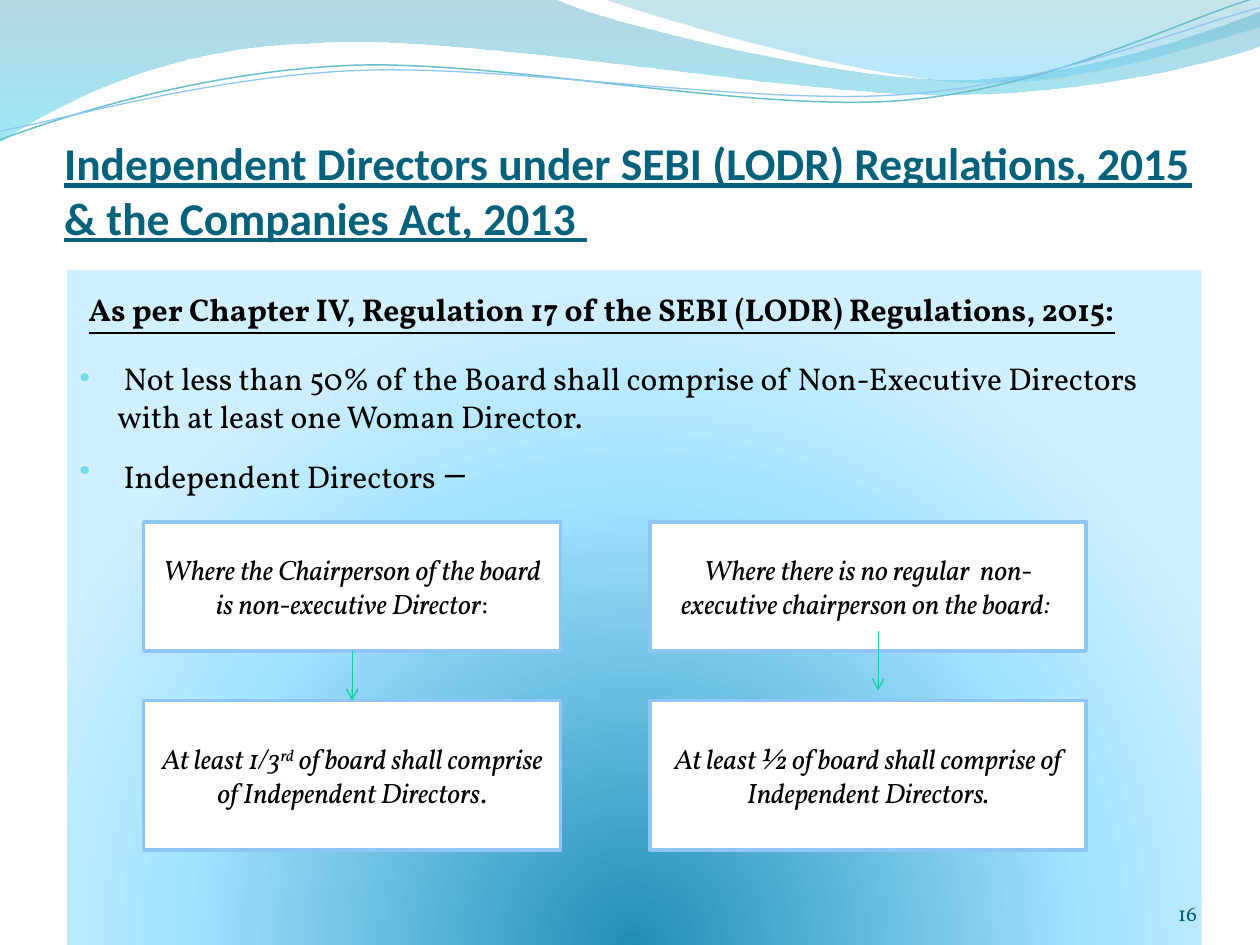
from lxml import etree
from pptx import Presentation
from pptx import util as u
from pptx.dml.color import RGBColor
from pptx.enum import shapes, text
from pptx.oxml import ns

WHITE = RGBColor(0xFF, 0xFF, 0xFF)
BLACK = RGBColor(0, 0, 0)
TITLE = RGBColor(0x04, 0x61, 0x7B)
NUMBER = RGBColor(0x04, 0x5D, 0x75)
BORDER = RGBColor(0x90, 0xC6, 0xF6)
WAVE = RGBColor(0x68, 0xBF, 0xCD)
ARROW = RGBColor(0x10, 0xCF, 0x9B)
BULLET = RGBColor(0x76, 0xD9, 0xE8)
UPPER_BAND = [(0, RGBColor(0x5F, 0xA8, 0xC4), 45), (100, RGBColor(0x4F, 0xDA, 0xEF), 55)]
RIGHT_BAND = [(0, RGBColor(0x4B, 0xAA, 0xB8), 30), (80, RGBColor(0x67, 0xCD, 0xF4), 45)]
PANEL = [(0, RGBColor(0x21, 0x8E, 0xB8), 100), (68, RGBColor(0xA2, 0xE3, 0xFF), 100),
         (100, RGBColor(0xD0, 0xEF, 0xFF), 100)]
COLUMNS, ROWS = 100, 75


def element(parent, tag, **attributes):
    child = etree.SubElement(parent, ns.qn(tag))
    for name, value in attributes.items():
        child.set(name, str(value))
    return child


def add_run(paragraph, content, font="Vollkorn", size=16, color=BLACK, bold=False,
            italic=False, underline=False, raised=False):
    run = paragraph.add_run()
    run.text = content
    run.font.name, run.font.size = font, u.Pt(size)
    run.font.bold, run.font.italic, run.font.underline = bold, italic, underline
    run.font.color.rgb = color
    if raised:
        run.font._element.set("baseline", "30000")


class SlideBuilder:
    def __init__(self, presentation):
        self.slide = presentation.slides.add_slide(presentation.slide_layouts[6])
        self.column = presentation.slide_width / COLUMNS
        self.row = presentation.slide_height / ROWS

    def place(self, *lengths):
        return [round(length * (self.row if index % 2 else self.column))
                for index, length in enumerate(lengths)]

    def gradient(self, shape, stops, circle=False):
        fill = etree.Element(ns.qn("a:gradFill"), rotWithShape="1")
        stop_list = element(fill, "a:gsLst")
        for position, color, opacity in stops:
            stop = element(stop_list, "a:gs", pos=position * 1000)
            tint = element(stop, "a:srgbClr", val=color)
            element(tint, "a:alpha", val=opacity * 1000)
        if circle:
            focus = element(fill, "a:path", path="circle")
            element(focus, "a:fillToRect", l=50000, t=130000, r=50000, b=-30000)
        else:
            element(fill, "a:lin", ang=5400000, scaled=0)
        properties = shape._element.spPr
        properties.find(ns.qn("a:prstGeom" if circle else "a:custGeom")).addnext(fill)
        shape.line.fill.background()

    def wave(self, start, segments, stops=None, color=None, width=0):
        anchors = [self.place(*segment[-2:]) for segment in segments]
        builder = self.slide.shapes.build_freeform(*self.place(*start), scale=1.0)
        builder.add_line_segments(anchors, close=stops is not None)
        shape = builder.convert_to_shape()
        shape.shadow.inherit = False
        for step, segment in zip(list(shape._element.iter(ns.qn("a:lnTo"))), segments):
            if len(segment) == 6:
                step.tag = ns.qn("a:cubicBezTo")
                controls = self.place(*segment[:4])
                for index, (x, y) in enumerate((controls[:2], controls[2:])):
                    point = element(step, "a:pt", x=x - shape.left, y=y - shape.top)
                    step.insert(index, point)
        if stops:
            self.gradient(shape, stops)
        else:
            shape.fill.background()
            shape.line.color.rgb, shape.line.width = color, u.Pt(width)

    def label(self, area, content, align=text.PP_ALIGN.LEFT, inset_top=0, **style):
        frame = self.slide.shapes.add_textbox(*self.place(*area)).text_frame
        frame.word_wrap = True
        frame.vertical_anchor = text.MSO_ANCHOR.BOTTOM
        frame.margin_left = frame.margin_right = frame.margin_bottom = 0
        frame.margin_top = u.Inches(inset_top)
        frame.paragraphs[0].alignment = align
        add_run(frame.paragraphs[0], content, **style)

    def rectangle(self, area):
        shape = self.slide.shapes.add_shape(shapes.MSO_SHAPE.RECTANGLE, *self.place(*area))
        shape.shadow.inherit = False
        shape.text_frame.word_wrap = True
        return shape

    def panel(self, area, paragraphs):
        shape = self.rectangle(area)
        self.gradient(shape, PANEL, circle=True)
        frame = shape.text_frame
        frame.vertical_anchor = text.MSO_ANCHOR.TOP
        for index, (bulleted, before, runs) in enumerate(paragraphs):
            paragraph = frame.add_paragraph() if index else frame.paragraphs[0]
            paragraph.alignment = text.PP_ALIGN.LEFT
            paragraph.space_before = u.Pt(before)
            properties = paragraph._p.get_or_add_pPr()
            properties.set("marL", str(u.Inches(0.3)))
            properties.set("indent", str(-u.Inches(0.3)))
            if bulleted:
                element(element(properties, "a:buClr"), "a:srgbClr", val=BULLET)
                element(properties, "a:buSzPct", val=95000)
                element(properties, "a:buFont", typeface="Arial")
                element(properties, "a:buChar", char="•")
            else:
                element(properties, "a:buNone")
            for content, style in runs:
                add_run(paragraph, content, **style)

    def box(self, area, runs):
        shape = self.rectangle(area)
        shape.fill.solid()
        shape.fill.fore_color.rgb = WHITE
        shape.line.color.rgb, shape.line.width = BORDER, u.Pt(2)
        shape.text_frame.vertical_anchor = text.MSO_ANCHOR.MIDDLE
        paragraph = shape.text_frame.paragraphs[0]
        paragraph.alignment = text.PP_ALIGN.CENTER
        for content, style in runs:
            add_run(paragraph, content, **{"italic": True, **style})

    def arrow(self, column, top, bottom):
        connector = self.slide.shapes.add_connector(
            shapes.MSO_CONNECTOR.STRAIGHT, *self.place(column, top, column, bottom))
        connector.line.color.rgb, connector.line.width = ARROW, u.Pt(0.75)
        element(connector.line._get_or_add_ln(), "a:tailEnd", type="arrow")
        element(connector._element.spPr, "a:effectLst")


def main():
    presentation = Presentation()
    presentation.slide_width, presentation.slide_height = u.Inches(10), u.Inches(7.5)
    builder = SlideBuilder(presentation)

    builder.wave((0, 0), [(44, -0.1), (47.6, 1.7, 66.4, 6.3, 75.8, 6.3),
                          (85.3, 6.3, 95.8, 2.6, 100, 0.9), (100.1, 3.6),
                          (98.3, 4.4, 87, 7.6, 74.6, 7.5), (62.2, 7.5, 38.2, 2.8, 25.7, 3.4),
                          (12.9, 3.6, 4.6, 8.3, -0.1, 11.3)], stops=UPPER_BAND)
    builder.wave((47.9, -0.1), [(50.9, 1.1, 68.2, 6.2, 76.9, 6.5),
                                (85.6, 6.9, 96.1, 3.2, 100, 2.1), (100, 0)], stops=RIGHT_BAND)
    builder.wave((0, 11.1), [(4.8, 9.3, 15.8, 5.7, 27.7, 5.2), (39.5, 4.7, 59.3, 8.9, 71.3, 8),
                             (83.3, 7.1, 93.8, 1.5, 99.8, -0.2)], color=WAVE, width=0.85)
    builder.wave((0, 10.4), [(4.7, 9.6, 16.4, 6.1, 28.3, 5.6), (40.3, 5.1, 59.7, 8.4, 71.7, 7.5),
                             (83.6, 6.7, 94.1, 2.1, 100, 0.6)], color=BORDER, width=0.75)

    builder.label((5.1, 9.2, 90, 10.2),
                  "Independent Directors under SEBI (LODR) Regulations, 2015 "
                  "& the Companies Act, 2013 ", inset_top=0.05,
                  font="Calibri", size=26, color=TITLE, bold=True, underline=True)

    body = {"size": 18}
    builder.panel((5.33, 21.43, 90, 53.57), [
        (False, 5, [(" ", {"size": 26, "color": WHITE}),
                    ("As per Chapter IV, Regulation 17 of the SEBI (LODR) Regulations, 2015:",
                     {**body, "bold": True, "underline": True})]),
        (True, 16, [(" Not less than 50% of the Board shall comprise of Non-Executive "
                     "Directors with at least one Woman Director.", body)]),
        (True, 5, [(" Independent Directors ", body), ("–", {"size": 26})]),
    ])

    cases = [
        (11.4, 33.1,
         [("Where the Chairperson of the board is non-executive Director", {}),
          (":", {"italic": False})],
         [("At least 1/3", {}), ("rd", {"raised": True}),
          (" of board shall comprise of Independent Directors", {}), (".", {"italic": False})]),
        (51.6, 34.6,
         [("Where there is no regular  non-executive chairperson on the board: ", {})],
         [("At least ½ of board shall comprise of Independent Directors.", {})]),
    ]
    for left, width, condition, requirement in cases:
        builder.box((left, 41.42, width, 10.25), condition)
        builder.box((left, 55.6, width, 11.85), requirement)
    builder.arrow(27.95, 51.7, 55.6)
    builder.arrow(69.7, 50.1, 54.8)

    builder.label((86.7, 69.5, 8.3, 4), "16", align=text.PP_ALIGN.RIGHT, size=12, color=NUMBER)
    presentation.save("out.pptx")


if __name__ == "__main__":
    main()
